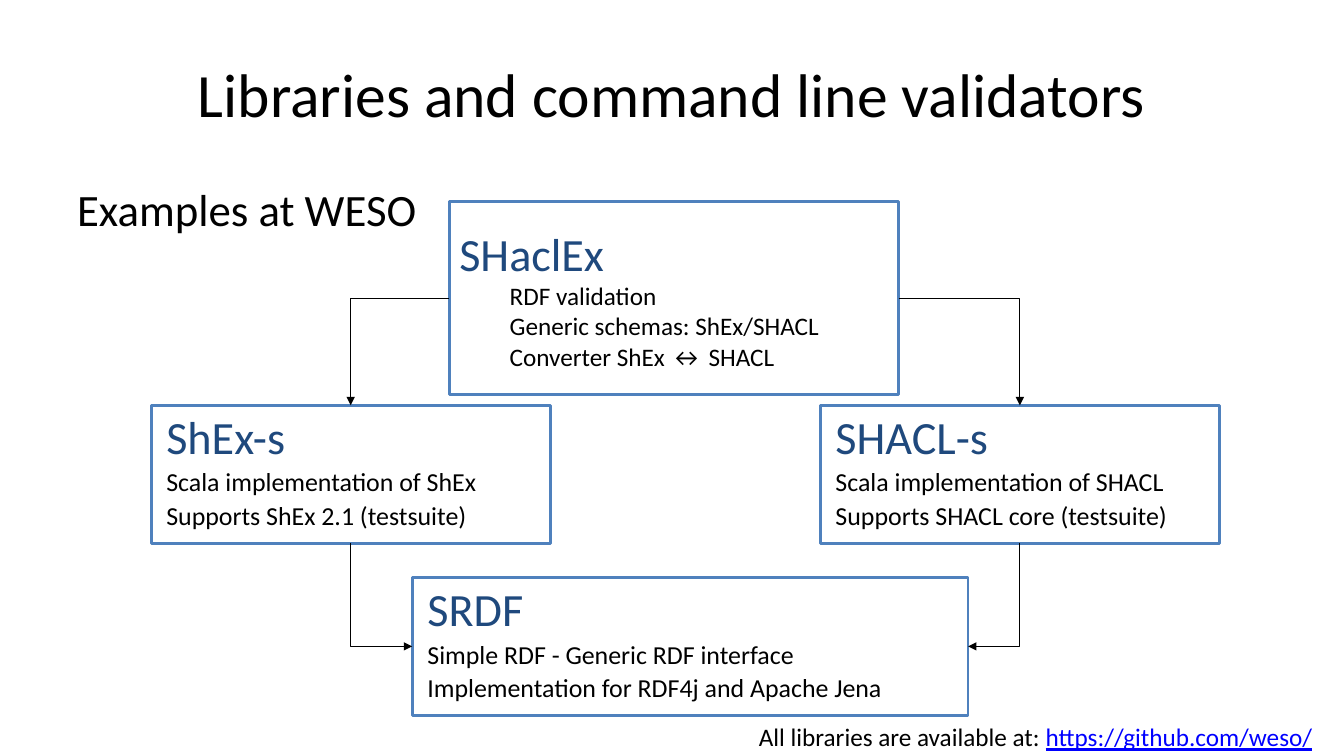
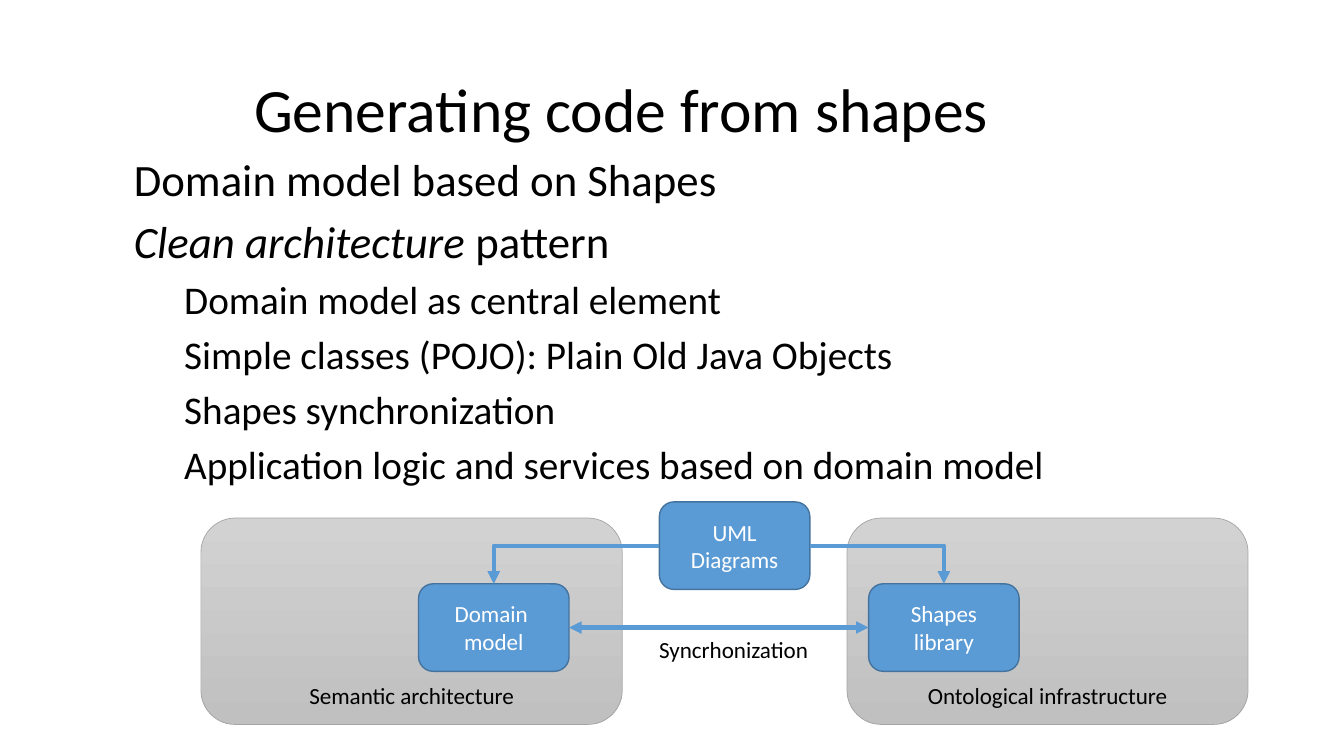
from lxml.etree import SubElement
from pptx import Presentation
from pptx.dml.color import RGBColor
from pptx.enum.shapes import MSO_CONNECTOR, MSO_SHAPE
from pptx.enum.text import MSO_ANCHOR, PP_ALIGN
from pptx.oxml.ns import qn
from pptx.util import Pt

FONT = "Calibri"
BLACK, WHITE, LINK = "000000", "FFFFFF", "0000FF"
NAVY, FRAME = "1F497D", "4F81BD"
BLUE, BLUE_EDGE = "5B9BD5", "43739E"
GREY_TOP, GREY_BOTTOM, GREY_EDGE = "D2D2D2", "C0C0C0", "A5A5A5"
TITLE_SIZE, BODY_SIZE, SUB_SIZE, DIAGRAM_SIZE = 44, 32, 28, 16.5
INDENT = 36
TOP, LEFT, BOTTOM, RIGHT = range(4)  # connection sites
rgb = RGBColor.from_string


def add_box(s, kind, at, fill, line, width):
    sp = s.shapes.add_shape(kind, *map(Pt, at))
    sp.shadow.inherit = False
    sp.fill.solid()
    sp.fill.fore_color.rgb = rgb(fill)
    sp.line.color.rgb = rgb(line)
    sp.line.width = Pt(width)
    return sp


def write(sp, paragraphs, color=BLACK, anchor=MSO_ANCHOR.TOP, align=PP_ALIGN.LEFT,
          gap=0, spacing=None, wrap=True):
    """Fill sp with (size, indent, runs); a run is (text, font settings), gap a share of the size."""
    tf = sp.text_frame
    tf.word_wrap = wrap
    tf.vertical_anchor = anchor
    for i, (size, indent, runs) in enumerate(paragraphs):
        p = tf.add_paragraph() if i else tf.paragraphs[0]
        p.alignment = align
        p.line_spacing = spacing
        p.space_before = Pt(gap * size if i else 0)
        p._p.get_or_add_pPr().set("marL", str(Pt(indent)))
        for text, settings in runs:
            r = p.add_run()
            r.text = text
            r.font.name = FONT
            r.font.size = Pt(size)
            r.font.color.rgb = rgb(settings.get("color", color))
            r.font.italic = settings.get("italic")
            r.font.underline = settings.get("underline")


prs = Presentation()
prs.slide_width, prs.slide_height = Pt(960), Pt(540)
libraries, shapes = [prs.slides.add_slide(prs.slide_layouts[6]) for _ in range(2)]

for s, title, at in [
    (libraries, "Libraries and command line validators", (48, 21.5, 864, 90)),
    (shapes, "Generating code from shapes", (60, 42, 768, 70.5)),
]:
    write(s.shapes.add_textbox(*map(Pt, at)), [(TITLE_SIZE, 0, [(title, {})])],
          anchor=MSO_ANCHOR.MIDDLE, align=PP_ALIGN.CENTER)

# Slide 1: libraries
sp = libraries.shapes.add_textbox(Pt(48), Pt(126), Pt(864), Pt(356))
write(sp, [(BODY_SIZE, 0, [("Examples at WESO", {})])])

shaclex = add_box(libraries, MSO_SHAPE.RECTANGLE, (321, 144, 321, 138), WHITE, FRAME, 2)
write(shaclex, [(33, 0, [("SHaclEx", {"color": NAVY})])] + [
    (18, INDENT, [(text, {})])
    for text in ("RDF validation", "Generic schemas: ShEx/SHACL", "Converter ShEx ↔ SHACL")
], anchor=MSO_ANCHOR.MIDDLE)

modules_row = []
for x, y, w, name, details in [
    (108, 289.5, 285, "ShEx-s",
     ("Scala implementation of ShEx", "Supports ShEx 2.1 (testsuite)")),
    (586, 289.5, 285, "SHACL-s",
     ("Scala implementation of SHACL", "Supports SHACL core (testsuite)")),
    (294.5, 412.5, 397, "SRDF",
     ("Simple RDF - Generic RDF interface", "Implementation for RDF4j and Apache Jena")),
]:
    sp = add_box(libraries, MSO_SHAPE.RECTANGLE, (x, y, w, 98.5), WHITE, FRAME, 2)
    tf = sp.text_frame
    tf.margin_left = tf.margin_right = Pt(10.8)
    tf.margin_top = tf.margin_bottom = Pt(6.5)
    write(sp, [(33, 0, [(name, {"color": NAVY})])]
          + [(18.5, 0, [(text, {})]) for text in details], gap=0.2, spacing=0.9)
    modules_row.append(sp)
shex, shacl, srdf = modules_row

sp = libraries.shapes.add_textbox(Pt(535), Pt(512), Pt(415), Pt(29))
write(sp, [(18, 0, [("All libraries are available at: ", {}),
                    ("https://github.com/weso/", {"color": LINK, "underline": True})])],
      wrap=False)

# Slide 2: code from shapes
sp = shapes.shapes.add_textbox(Pt(88.5), Pt(104.5), Pt(815), Pt(230))
write(sp, [
    (BODY_SIZE, 0, [("Domain model based on Shapes", {})]),
    (BODY_SIZE, 0, [("Clean architecture ", {"italic": True}), ("pattern", {})]),
] + [
    (SUB_SIZE, INDENT, [(text, {})])
    for text in ("Domain model as central element",
                 "Simple classes (POJO): Plain Old Java Objects",
                 "Shapes synchronization",
                 "Application logic and services based on domain model")
], gap=0.2)

for x, w, name in [(143.5, 301, "Semantic architecture"),
                   (605, 286.5, "Ontological infrastructure")]:
    panel = add_box(shapes, MSO_SHAPE.ROUNDED_RECTANGLE, (x, 370, w, 147.5),
                    GREY_TOP, GREY_EDGE, 0.5)
    panel.fill.gradient()
    panel.fill.gradient_angle = 270
    for stop, position, color in zip(panel.fill.gradient_stops, (0, 1), (GREY_TOP, GREY_BOTTOM)):
        stop.position = position
        stop.color.rgb = rgb(color)
    write(panel, [(DIAGRAM_SIZE, 0, [(name, {})])],
          anchor=MSO_ANCHOR.BOTTOM, align=PP_ALIGN.CENTER)

blocks = []
for x, y, words in [(471, 358.5, ("UML", "Diagrams")),
                    (620.5, 417, ("Shapes", "library")),
                    (299, 417, ("Domain ", "model"))]:
    sp = add_box(shapes, MSO_SHAPE.ROUNDED_RECTANGLE, (x, y, 107.5, 62.5), BLUE, BLUE_EDGE, 1)
    write(sp, [(DIAGRAM_SIZE, 0, [(word, {})]) for word in words], color=WHITE,
          anchor=MSO_ANCHOR.MIDDLE, align=PP_ALIGN.CENTER)
    blocks.append(sp)
uml, library, domain = blocks

sp = shapes.shapes.add_textbox(Pt(443.5), Pt(450), Pt(161), Pt(27))
write(sp, [(DIAGRAM_SIZE, 0, [("Syncrhonization", {})])], align=PP_ALIGN.CENTER)

# Connectors leave sideways, so elbows bend once
ELBOW, STRAIGHT = MSO_CONNECTOR.ELBOW, MSO_CONNECTOR.STRAIGHT
for s, kind, start, start_site, end, end_site, color, width, heads in [
    (libraries, ELBOW, shaclex, RIGHT, shacl, TOP, BLACK, 0.75, ["tailEnd"]),
    (libraries, ELBOW, shaclex, LEFT, shex, TOP, BLACK, 0.75, ["tailEnd"]),
    (libraries, ELBOW, srdf, LEFT, shex, BOTTOM, BLACK, 0.75, ["headEnd"]),
    (libraries, ELBOW, srdf, RIGHT, shacl, BOTTOM, BLACK, 0.75, ["headEnd"]),
    (shapes, ELBOW, uml, LEFT, domain, TOP, BLUE, 3, ["tailEnd"]),
    (shapes, ELBOW, uml, RIGHT, library, TOP, BLUE, 3, ["tailEnd"]),
    (shapes, STRAIGHT, domain, RIGHT, library, LEFT, BLUE, 3, ["headEnd", "tailEnd"]),
]:
    arrow = s.shapes.add_connector(kind, 0, 0, 0, 0)
    arrow.begin_connect(start, start_site)
    arrow.end_connect(end, end_site)
    arrow.line.color.rgb = rgb(color)
    arrow.line.width = Pt(width)
    props = arrow._element.spPr
    if kind == ELBOW:
        props.find(qn("a:prstGeom")).set("prst", "bentConnector2")
    for head in heads:
        SubElement(props.find(qn("a:ln")), qn(f"a:{head}"), type="triangle")
    SubElement(props, qn("a:effectLst"))

prs.save("out.pptx")
